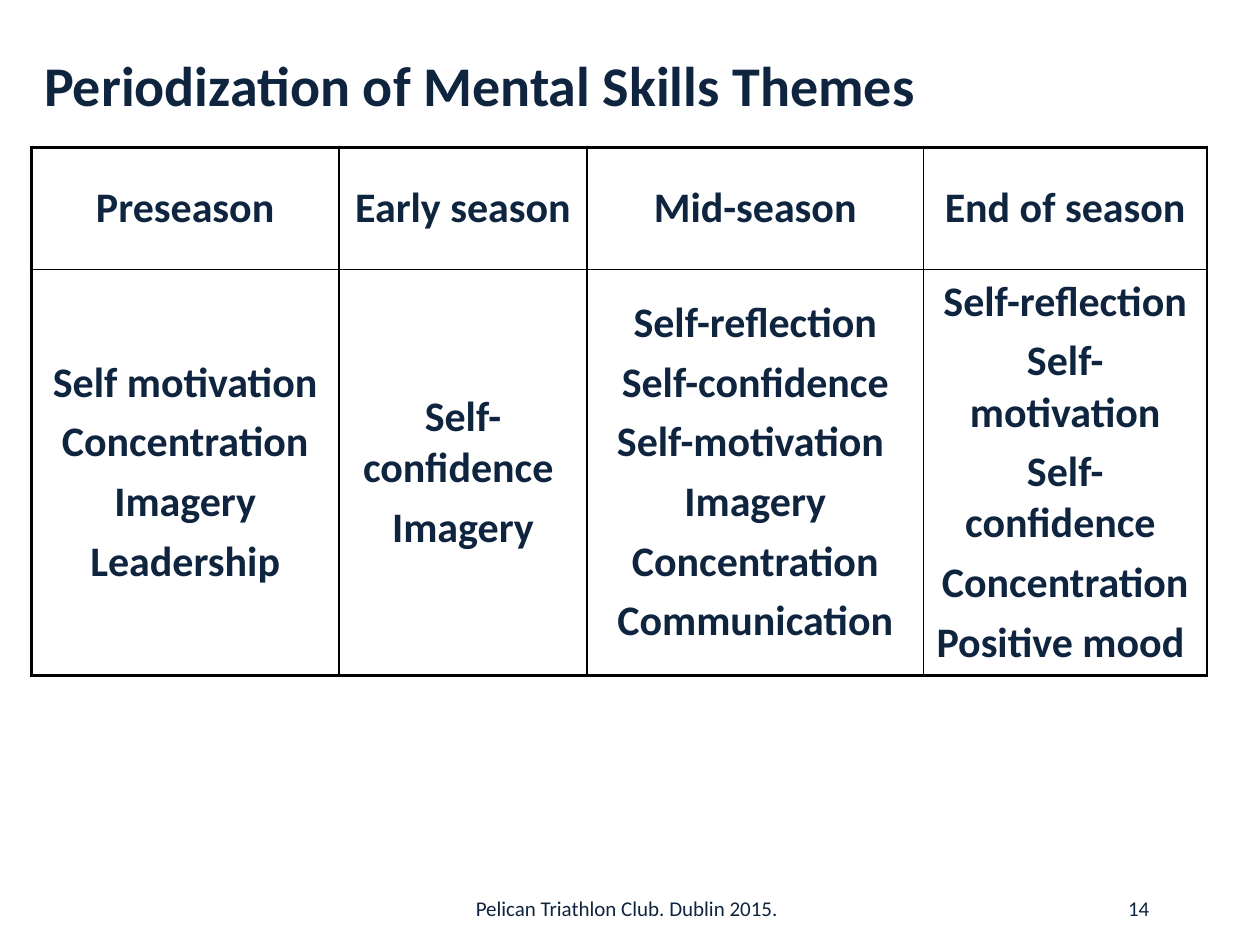
from dataclasses import dataclass

from lxml.etree import SubElement
from pptx import Presentation
from pptx.dml.color import RGBColor
from pptx.enum.text import MSO_ANCHOR as Anchor, PP_ALIGN as Align
from pptx.oxml.ns import qn
from pptx.util import Inches, Pt


@dataclass(frozen=True)
class Theme:
    font: str = "Calibri"
    ink: str = "0F243E"
    rule: str = "000000"
    title: int = 32
    body: int = 24
    footer: int = 12
    thin: float = 1
    thick: float = 2.25


THEME = Theme()
SEASONS = {
    "Preseason": ["Self motivation", "Concentration", "Imagery", "Leadership"],
    "Early season": ["Self-confidence ", "Imagery"],
    "Mid-season": ["Self-reflection", "Self-confidence", "Self-motivation ",
                   "Imagery", "Concentration", "Communication"],
    "End of season": ["Self-reflection", "Self-motivation", "Self-confidence ",
                      "Concentration", "Positive mood "],
}
COLUMN_WIDTHS = [2.44, 1.97, 2.67, 2.25]
ROW_HEIGHTS = [0.97, 3.22]


def set_all(target, values):
    for name, value in values.items():
        setattr(target, name, value)


def place(shape, left, top, width, height):
    set_all(shape, {"left": Inches(left), "top": Inches(top),
                    "width": Inches(width), "height": Inches(height)})


def write(frame, lines, size, align, bold=False, before=0):
    """Fill a text frame with one paragraph per line."""
    set_all(frame, {"word_wrap": True, "vertical_anchor": Anchor.MIDDLE})
    for index, line in enumerate(lines):
        para = frame.add_paragraph() if index else frame.paragraphs[0]
        set_all(para, {"alignment": align, "space_before": Pt(before)})
        span = para.add_run()
        span.text = line
        set_all(span.font, {"name": THEME.font, "size": Pt(size), "bold": bold})
        span.font.color.rgb = RGBColor.from_string(THEME.ink)


def add_title(page, text):
    title = page.shapes.title
    place(title, 0.25, 0.17, 8.58, 1)
    write(title.text_frame, [text], THEME.title, Align.LEFT, bold=True)


def set_borders(cell, widths):
    """Draw cell borders; widths maps L, R, T, B (in that order) to points."""
    props = cell._tc.get_or_add_tcPr()
    for index, (side, width) in enumerate(widths.items()):
        line = SubElement(props, qn(f"a:ln{side}"), w=str(Pt(width)))
        fill = SubElement(line, qn("a:solidFill"))
        SubElement(fill, qn("a:srgbClr"), val=THEME.rule)
        props.insert(index, line)


def add_season_table(page):
    frame = page.shapes.add_table(
        len(ROW_HEIGHTS), len(SEASONS), Inches(0.25), Inches(1.17),
        Inches(sum(COLUMN_WIDTHS)), Inches(sum(ROW_HEIGHTS)))
    table = frame.table
    set_all(table, {"first_row": False, "horz_banding": False})
    for column, width in zip(table.columns, COLUMN_WIDTHS):
        column.width = Inches(width)
    for row, height in zip(table.rows, ROW_HEIGHTS):
        row.height = Inches(height)

    for col, (season, skills) in enumerate(SEASONS.items()):
        for row, lines in enumerate([[season], skills]):
            cell = table.cell(row, col)
            write(cell.text_frame, lines, THEME.body, Align.CENTER,
                  bold=True, before=THEME.body * 0.2)
            cell.vertical_anchor = Anchor.MIDDLE
            cell.fill.background()
            set_borders(cell, {
                "L": THEME.thin if col else THEME.thick,
                "R": THEME.thin,
                "T": THEME.thin if row else THEME.thick,
                "B": THEME.thick if row else THEME.thin,
            })


def add_footer(page, text, left, width, align):
    box = page.shapes.add_textbox(
        Inches(left), Inches(6.96), Inches(width), Inches(0.5))
    write(box.text_frame, [text], THEME.footer, align)


def main():
    deck = Presentation()
    set_all(deck, {"slide_width": Inches(10), "slide_height": Inches(7.5)})
    page = deck.slides.add_slide(deck.slide_layouts.get_by_name("Title Only"))
    add_title(page, "Periodization of Mental Skills Themes")
    add_season_table(page)
    add_footer(page, "Pelican Triathlon Club. Dublin 2015.", 3.39, 3.17, Align.CENTER)
    add_footer(page, "14", 7.14, 2.08, Align.RIGHT)
    deck.save("out.pptx")


if __name__ == "__main__":
    main()
